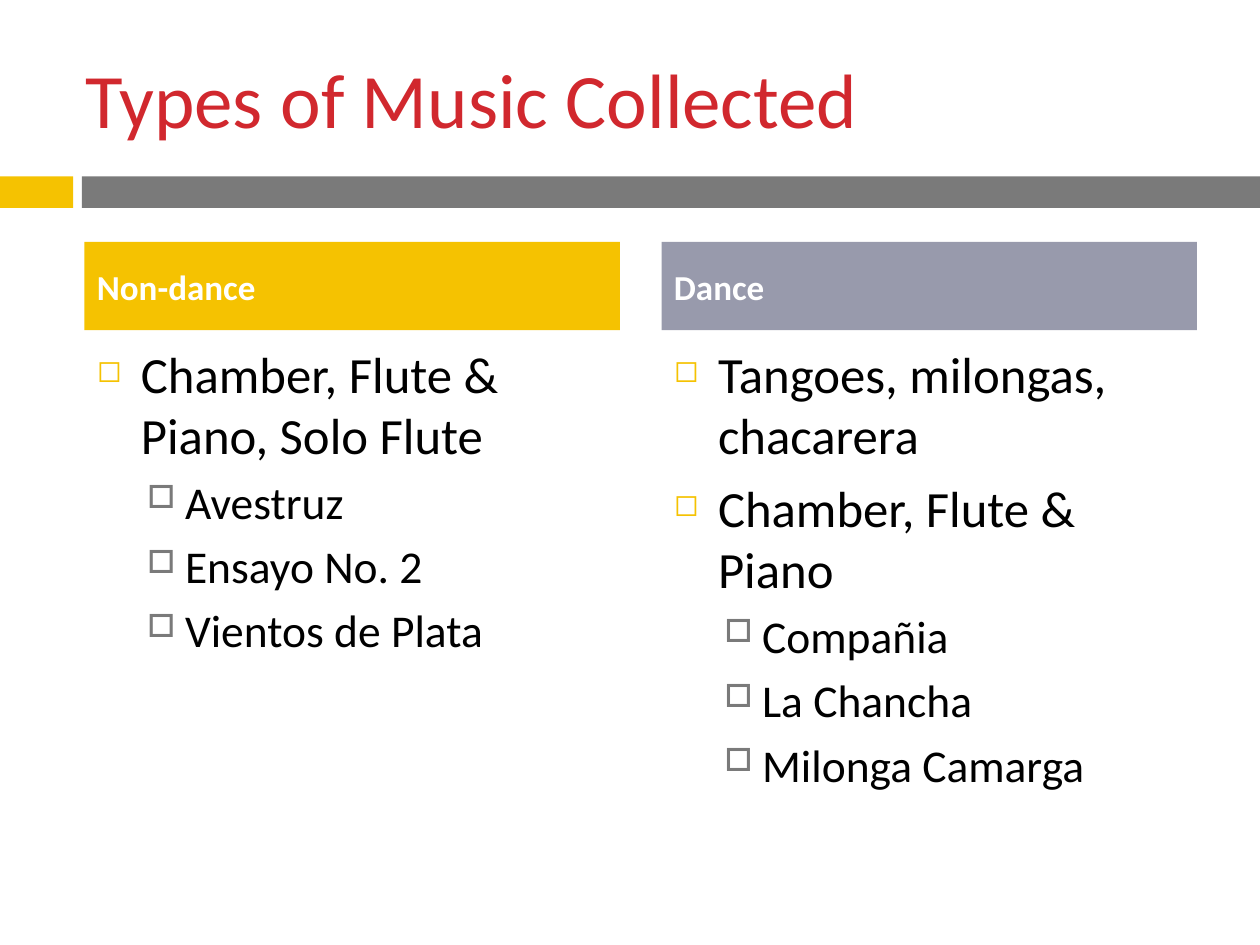
from dataclasses import dataclass

from lxml import etree
from pptx import Presentation
from pptx.dml.color import RGBColor
from pptx.enum import shapes, text
from pptx.oxml.ns import qn
from pptx.util import Inches, Pt


@dataclass(frozen=True)
class Theme:
    font: str = "Calibri"
    red: str = "D1282E"
    gold: str = "F5C201"
    gray: str = "7A7A7A"
    slate: str = "989AAC"
    black: str = "000000"
    white: str = "FFFFFF"
    title: int = 44
    head: int = 20
    # Per list level: size, space before, indent, hang, bullet, colour, percent
    levels: tuple = (
        (29, 7, 0.35, 0.35, "◻", gold, 60),
        (26, 5.5, 0.7, 0.3, "□", gray, 70),
    )


THEME = Theme()


def add_rect(slide, box, fill):
    rect = slide.shapes.add_shape(
        shapes.MSO_SHAPE.RECTANGLE, *map(Inches, box))
    rect.shadow.inherit = False
    rect.fill.solid()
    rect.fill.fore_color.rgb = RGBColor.from_string(fill)
    rect.line.fill.background()
    return rect


def add_frame(slide, box):
    frame = slide.shapes.add_textbox(*map(Inches, box)).text_frame
    frame.word_wrap = True
    return frame


def write(para, words, size, color, bold=False, before=0):
    para.alignment = text.PP_ALIGN.LEFT
    para.space_before = Pt(before)
    run = para.add_run()
    run.text = words
    font = run.font
    font.name, font.size, font.bold = THEME.font, Pt(size), bold
    font.color.rgb = RGBColor.from_string(color)


def set_bullet(para, indent, hang, char, color, percent):
    props = para._p.get_or_add_pPr()
    props.set("marL", str(Inches(indent)))
    props.set("indent", str(-Inches(hang)))
    tint = etree.SubElement(props, qn("a:buClr"))
    etree.SubElement(tint, qn("a:srgbClr"), val=color)
    etree.SubElement(props, qn("a:buSzPct"), val=str(percent * 1000))
    etree.SubElement(props, qn("a:buChar"), char=char)


def add_title(slide, box, words):
    frame = add_frame(slide, box)
    frame.vertical_anchor = text.MSO_ANCHOR.MIDDLE
    write(frame.paragraphs[0], words, THEME.title, THEME.red)


def add_band(slide, box):
    """Split a strip into a short gold block and a long gray bar."""
    left, top, width, height = box
    block, start = 0.58, 0.65
    add_rect(slide, (left, top, block, height), THEME.gold)
    add_rect(slide, (left + start, top, width - start, height), THEME.gray)


def add_list(slide, box, items):
    frame = add_frame(slide, box)
    for i, (level, words) in enumerate(items):
        para = frame.add_paragraph() if i else frame.paragraphs[0]
        para.level = level
        size, before, *bullet = THEME.levels[level]
        write(para, words, size, THEME.black, before=before)
        set_bullet(para, *bullet)


def add_column(slide, box, head, fill, items):
    """Place a filled heading with a bulleted list below it."""
    left, top, width, height = box
    tall, gap = 0.7, 0.05
    drop = tall + gap
    add_list(slide, (left, top + drop, width, height - drop), items)
    frame = add_rect(slide, (left, top, width, tall), fill).text_frame
    frame.word_wrap = True
    frame.vertical_anchor = text.MSO_ANCHOR.MIDDLE
    write(frame.paragraphs[0], head, THEME.head, THEME.white,
          bold=True, before=7)


COLUMNS = (
    ("Non-dance", THEME.gold, (
        (0, "Chamber, Flute & Piano, Solo Flute"),
        (1, "Avestruz"),
        (1, "Ensayo No. 2"),
        (1, "Vientos de Plata"),
    )),
    ("Dance", THEME.slate, (
        (0, "Tangoes, milongas, chacarera"),
        (0, "Chamber, Flute & Piano"),
        (1, "Compañia"),
        (1, "La Chancha"),
        (1, "Milonga Camarga"),
    )),
)


def main():
    deck = Presentation()
    deck.slide_width, deck.slide_height = Inches(10), Inches(7.5)
    slide = deck.slides.add_slide(deck.slide_layouts[6])
    add_band(slide, (0, 1.4, 10, 0.25))
    add_title(slide, (0.58, 0.3, 8.92, 0.95), "Types of Music Collected")
    left, width, gap = 0.67, 4.25, 0.33
    for i, column in enumerate(COLUMNS):
        box = (left + i * (width + gap), 1.92, width, 4.67)
        add_column(slide, box, *column)
    deck.save("out.pptx")


if __name__ == "__main__":
    main()
